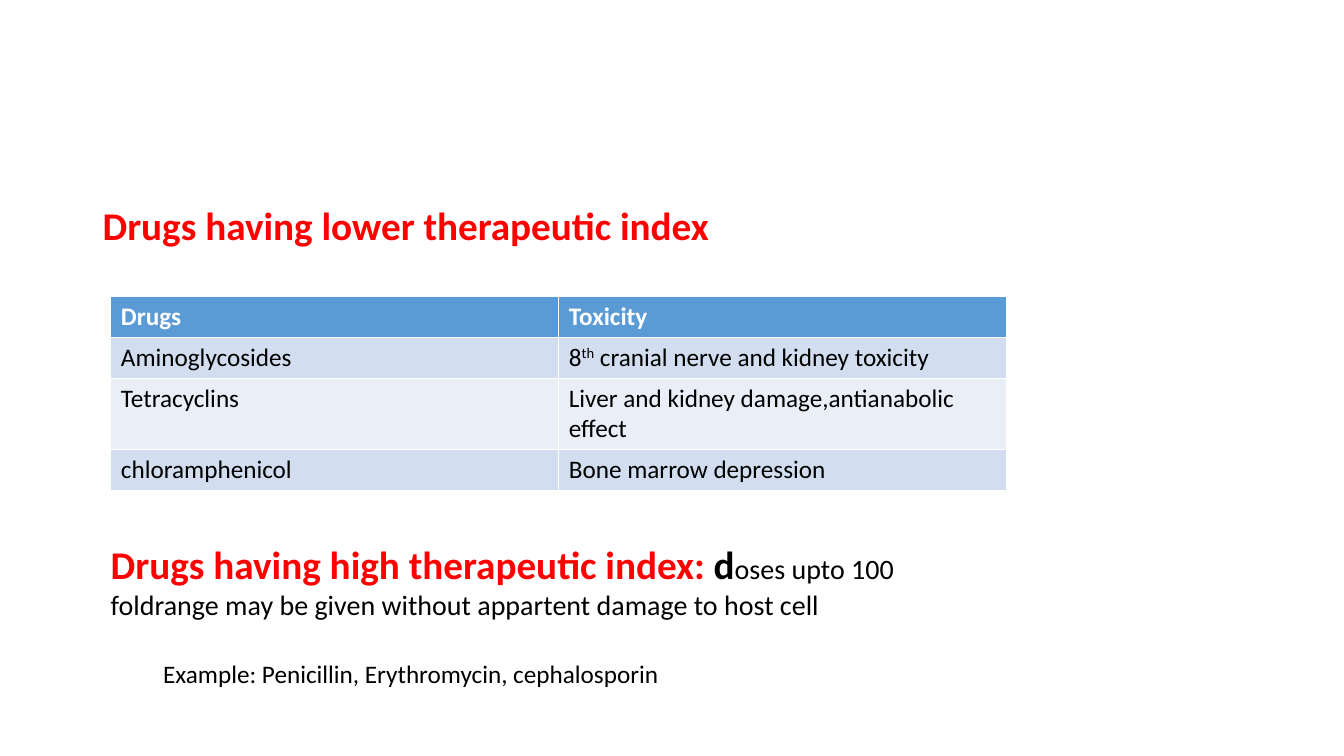
import pptx
import pptx.dml.color
import pptx.enum.text
import pptx.util
from dataclasses import dataclass

Pt = pptx.util.Pt


@dataclass(frozen=True)
class Theme:
    font: str = "Calibri"
    heading_color: str = "FF0000"
    text_color: str = "000000"
    header_text: str = "FFFFFF"
    header_fill: str = "5B9BD5"
    band_fills: tuple = ("D2DEEF", "EAEFF7")
    heading_size: int = 28
    body_size: int = 20
    small_size: int = 18


theme = Theme()


def add_text(paragraph, text, size=theme.small_size, color=theme.text_color,
             bold=False, superscript=False):
    run = paragraph.add_run()
    run.text = text
    run.font.name = theme.font
    run.font.size = Pt(size)
    run.font.bold = bold
    run.font.color.rgb = pptx.dml.color.RGBColor.from_string(color)
    if superscript:
        run._r.get_or_add_rPr().set("baseline", "30000")


def add_box(left, top, width, height):
    """Add a wrapping text box and return its first paragraph."""
    frame = slide.shapes.add_textbox(Pt(left), Pt(top), Pt(width), Pt(height)).text_frame
    frame.word_wrap = True
    frame.auto_size = pptx.enum.text.MSO_AUTO_SIZE.NONE
    return frame.paragraphs[0]


presentation = pptx.Presentation()
presentation.slide_width = Pt(960)
presentation.slide_height = Pt(540)
slide = presentation.slides.add_slide(presentation.slide_layouts[6])

heading = dict(size=theme.heading_size, color=theme.heading_color, bold=True)

# Lower therapeutic index
paragraph = add_box(66.24, 144, 828, 342.72)
paragraph.line_spacing = 0.9
add_text(paragraph, "Drugs having lower therapeutic index", **heading)

toxicity_rows = [
    ("Drugs", "Toxicity"),
    ("Aminoglycosides", "8|th| cranial nerve and kidney toxicity"),
    ("Tetracyclins", "Liver and kidney damage,antianabolic effect"),
    ("chloramphenicol", "Bone marrow depression"),
]
row_height = 29.2
table = slide.shapes.add_table(
    len(toxicity_rows), 2, Pt(79.2), Pt(211.68), Pt(640), Pt(row_height * len(toxicity_rows))
).table
for row_index, row in enumerate(toxicity_rows):
    is_header = row_index == 0
    fill = theme.header_fill if is_header else theme.band_fills[(row_index - 1) % 2]
    color = theme.header_text if is_header else theme.text_color
    for column_index, text in enumerate(row):
        cell = table.cell(row_index, column_index)
        cell.fill.solid()
        cell.fill.fore_color.rgb = pptx.dml.color.RGBColor.from_string(fill)
        # Text between bars is raised
        for part_index, part in enumerate(text.split("|")):
            add_text(cell.text_frame.paragraphs[0], part, color=color,
                     bold=is_header, superscript=part_index == 1)

# High therapeutic index
paragraph = add_box(72, 382.32, 646.56, 65.52)
add_text(paragraph, "Drugs having high therapeutic index:", **heading)
add_text(paragraph, " d", size=theme.heading_size, bold=True)
add_text(paragraph, "oses upto 100 foldrange may be given without appartent damage to host cell",
         size=theme.body_size)

paragraph = add_box(109.44, 466.56, 471.6, 28.8)
add_text(paragraph, "Example: Penicillin, Erythromycin, cephalosporin")

presentation.save("out.pptx")
